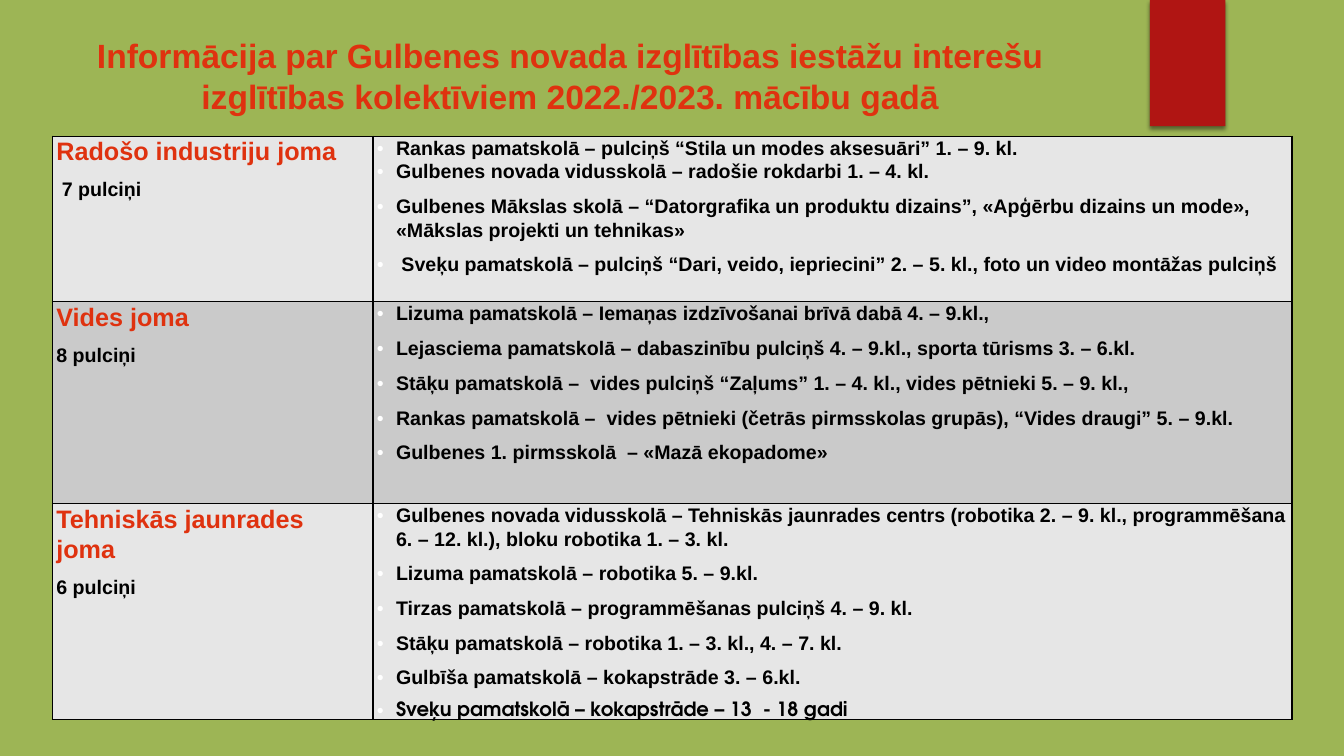
from dataclasses import dataclass

from lxml.etree import SubElement
from pptx import Presentation
from pptx.dml.color import RGBColor
from pptx.enum.shapes import MSO_SHAPE
from pptx.enum.text import MSO_ANCHOR, MSO_AUTO_SIZE, PP_ALIGN
from pptx.oxml.ns import qn
from pptx.util import Cm, Pt


@dataclass(frozen=True)
class Theme:
    background: str = "9DB555"
    ribbon: str = "B01513"
    accent: str = "DF320F"
    text: str = "000000"
    bullet: str = "FFFFFF"
    light: str = "E6E6E6"
    dark: str = "CACACA"
    font: str = "Arial"
    alt_font: str = "TeX Gyre Adventor"
    title_size: int = 24
    heading_size: int = 18
    body_size: int = 14
    line_spacing: float = 1.07
    gap: int = 8


THEME = Theme()
TITLE = ("Informācija par Gulbenes novada izglītības iestāžu interešu "
         "izglītības kolektīviem 2022./2023. mācību gadā")

# Heading, number of clubs, row height in cm, clubs
FIELDS = [
    ("Radošo industriju joma", " 7 pulciņi", 4.17, [
        "Rankas pamatskolā – pulciņš “Stila un modes aksesuāri” 1. – 9. kl.",
        "Gulbenes novada vidusskolā – radošie rokdarbi 1. – 4. kl.",
        "Gulbenes Mākslas skolā – “Datorgrafika un produktu dizains”, "
        "«Apģērbu dizains un mode», «Mākslas projekti un tehnikas»",
        " Sveķu pamatskolā – pulciņš “Dari, veido, iepriecini” 2. – 5. kl., "
        "foto un video montāžas pulciņš",
    ]),
    ("Vides joma", "8 pulciņi", 5.08, [
        "Lizuma pamatskolā – Iemaņas izdzīvošanai brīvā dabā 4. – 9.kl.,",
        "Lejasciema pamatskolā – dabaszinību pulciņš 4. – 9.kl., sporta tūrisms 3. – 6.kl.",
        "Stāķu pamatskolā –  vides pulciņš “Zaļums” 1. – 4. kl., vides pētnieki 5. – 9. kl.,",
        "Rankas pamatskolā –  vides pētnieki (četrās pirmsskolas grupās), "
        "“Vides draugi” 5. – 9.kl.",
        "Gulbenes 1. pirmsskolā  – «Mazā ekopadome»",
    ]),
    ("Tehniskās jaunrades joma", "6 pulciņi", 5.46, [
        "Gulbenes novada vidusskolā – Tehniskās jaunrades centrs (robotika 2. – 9. kl., "
        "programmēšana 6. – 12. kl.), bloku robotika 1. – 3. kl.",
        "Lizuma pamatskolā – robotika 5. – 9.kl.",
        "Tirzas pamatskolā – programmēšanas pulciņš 4. – 9. kl.",
        "Stāķu pamatskolā – robotika 1. – 3. kl., 4. – 7. kl.",
        "Gulbīša pamatskolā – kokapstrāde 3. – 6.kl.",
        "Sveķu pamatskolā – kokapstrāde – 13  - 18 gadi",
    ]),
]
TIGHT_CLUB = FIELDS[0][3][1]
ALT_FONT_CLUB = FIELDS[2][3][-1]


def style_runs(p, size, color, font=THEME.font):
    for r in p.runs:
        r.font.name = font
        r.font.size = Pt(size)
        r.font.bold = True
        r.font.color.rgb = RGBColor.from_string(color)


def add_bullet(p):
    pPr = p._p.get_or_add_pPr()
    pPr.set("marL", str(Cm(0.48)))
    pPr.set("indent", str(-Cm(0.48)))
    SubElement(SubElement(pPr, qn("a:buClr")), qn("a:srgbClr"), val=THEME.bullet)
    SubElement(pPr, qn("a:buFont"), typeface=THEME.font)
    SubElement(pPr, qn("a:buChar"), char="•")


def format_cell(cell, fill):
    cell.margin_left = cell.margin_right = Cm(0.1)
    cell.margin_top = cell.margin_bottom = 0
    cell.vertical_anchor = MSO_ANCHOR.TOP
    tcPr = cell._tc.get_or_add_tcPr()
    for side in ("lnL", "lnR", "lnT", "lnB"):
        ln = SubElement(tcPr, qn(f"a:{side}"), w=str(Pt(1)))
        SubElement(SubElement(ln, qn("a:solidFill")), qn("a:srgbClr"), val=THEME.text)
    cell.fill.solid()
    cell.fill.fore_color.rgb = RGBColor.from_string(fill)


def fill_cell(cell, lines, bulleted=False):
    """Write (text, size, color, font) lines as the paragraphs of a cell."""
    tf = cell.text_frame
    for i, (text, size, color, font) in enumerate(lines):
        p = tf.add_paragraph() if i else tf.paragraphs[0]
        p.text = text
        if bulleted:
            add_bullet(p)
        p.line_spacing = THEME.line_spacing
        if i and text != TIGHT_CLUB:
            p.space_before = Pt(THEME.gap)
        style_runs(p, size, color, font)


def add_ribbon(s, left, top, width, height):
    sp = s.shapes.add_shape(MSO_SHAPE.RECTANGLE, left, top, width, height)
    sp.fill.solid()
    sp.fill.fore_color.rgb = RGBColor.from_string(THEME.ribbon)
    sp.line.fill.background()
    sp.shadow.inherit = False
    # Soft shadow straight below
    effects = sp._element.spPr.find(qn("a:effectLst"))
    shadow = SubElement(effects, qn("a:outerShdw"), blurRad=str(Pt(3)),
                        dist=str(Pt(2)), dir="5400000", rotWithShape="0")
    color = SubElement(shadow, qn("a:srgbClr"), val=THEME.text)
    SubElement(color, qn("a:alpha"), val="45000")


def add_title(s, left, top, width, height):
    sp = s.shapes.title
    sp.left, sp.top, sp.width, sp.height = left, top, width, height
    tf = sp.text_frame
    tf.text = TITLE
    tf.word_wrap = True
    tf.auto_size = MSO_AUTO_SIZE.NONE
    tf.vertical_anchor = MSO_ANCHOR.TOP
    p = tf.paragraphs[0]
    p.alignment = PP_ALIGN.CENTER
    p.line_spacing = 1.0
    style_runs(p, THEME.title_size, THEME.accent)


def add_fields_table(s, left, top, width, height):
    table = s.shapes.add_table(len(FIELDS), 2, left, top, width, height).table
    table.first_row = table.horz_banding = False
    table.columns[0].width = Cm(8.08)
    table.columns[1].width = width - Cm(8.08)
    for i, (heading, count, row_height, clubs) in enumerate(FIELDS):
        table.rows[i].height = Cm(row_height)
        for cell in table.rows[i].cells:
            format_cell(cell, THEME.dark if i % 2 else THEME.light)
        fill_cell(table.cell(i, 0), [
            (heading, THEME.heading_size, THEME.accent, THEME.font),
            (count, THEME.body_size, THEME.text, THEME.font),
        ])
        fill_cell(table.cell(i, 1), [
            (club, THEME.body_size, THEME.text,
             THEME.alt_font if club == ALT_FONT_CLUB else THEME.font)
            for club in clubs
        ], bulleted=True)


def main():
    prs = Presentation()
    prs.slide_width, prs.slide_height = Cm(33.87), Cm(19.05)
    s = prs.slides.add_slide(prs.slide_layouts[5])
    s.background.fill.solid()
    s.background.fill.fore_color.rgb = RGBColor.from_string(THEME.background)
    add_ribbon(s, Cm(28.98), 0, Cm(1.9), Cm(3.18))
    add_title(s, Cm(1.3), Cm(0.76), Cm(26.14), Cm(2.67))
    table_height = sum(Cm(field[2]) for field in FIELDS)
    add_fields_table(s, Cm(1.32), Cm(3.43), Cm(31.24), table_height)
    prs.save("out.pptx")


if __name__ == "__main__":
    main()
